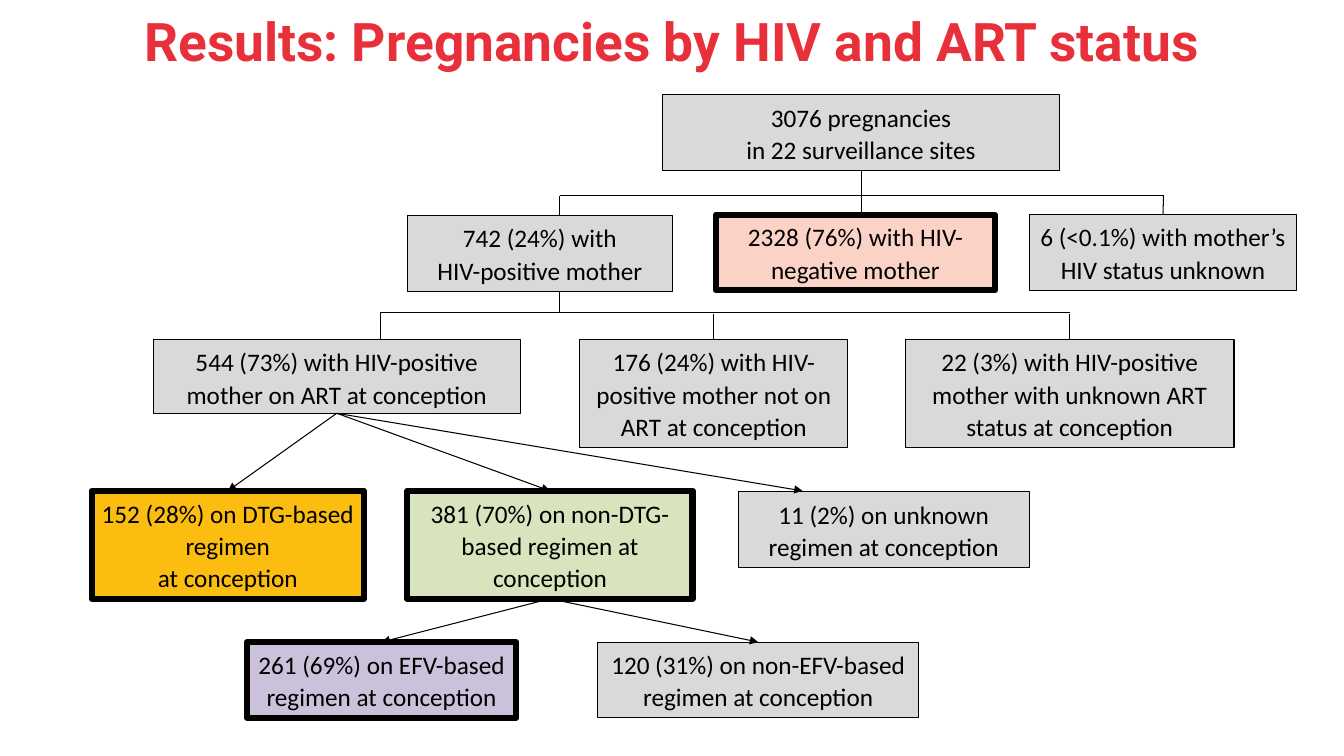
from dataclasses import dataclass

from lxml import etree
from pptx import Presentation
from pptx.dml.color import RGBColor
from pptx.enum.shapes import MSO_CONNECTOR, MSO_SHAPE
from pptx.enum.text import MSO_ANCHOR, MSO_AUTO_SIZE, PP_ALIGN
from pptx.oxml.ns import qn
from pptx.util import Emu, Pt

RECTANGLE = MSO_SHAPE.RECTANGLE
STRAIGHT = MSO_CONNECTOR.STRAIGHT
CENTER = PP_ALIGN.CENTER
TOP, BOTTOM = 0, 2  # connection sites of a rectangle
SCALE = 9144  # EMU per px, 100 px to the inch


@dataclass(frozen=True)
class Theme:
    title_font: str = "Roboto"
    body_font: str = "Calibri"
    title_size: int = 38
    body_size: int = 18
    title: str = "E8303B"
    ink: str = "000000"
    grey: str = "D9D9D9"
    peach: str = "FAD3C6"
    amber: str = "FBBD0F"
    green: str = "D7E4BD"
    purple: str = "CCC1DA"
    thin: float = 0.75
    thick: float = 4.5


THEME = Theme()
TITLE = "Results: Pregnancies by HIV and ART status"

# name: (text, left, top, width, height, fill); coloured boxes get a thick outline
BOXES = {
    "total": ("3076 pregnancies\nin 22 surveillance sites", 657, 94, 394, 75, THEME.grey),
    "positive": ("742 (24%) with\nHIV-positive mother", 404, 214, 263, 75, THEME.grey),
    "negative": ("2328 (76%) with HIV-negative mother", 710, 213, 277, 75, THEME.peach),
    "status unknown": ("6 (<0.1%) with mother’s HIV status unknown", 1021, 213, 265, 75, THEME.grey),
    "on ART": ("544 (73%) with HIV-positive mother on ART at conception", 152, 337, 364, 73, THEME.grey),
    "not on ART": ("176 (24%) with HIV-positive mother not on ART at conception", 575, 337, 266, 107, THEME.grey),
    "ART unknown": ("22 (3%) with HIV-positive mother with unknown ART status at conception",
                    898, 337, 326, 107, THEME.grey),
    "DTG": ("152 (28%) on DTG-based regimen\nat conception", 91, 487, 270, 107, THEME.amber),
    "non-DTG": ("381 (70%) on non-DTG-based regimen at conception", 404, 487, 283, 107, THEME.green),
    "regimen unknown": ("11 (2%) on unknown regimen at conception", 732, 488, 289, 75, THEME.grey),
    "EFV": ("261 (69%) on EFV-based regimen at conception", 245, 637, 267, 75, THEME.purple),
    "non-EFV": ("120 (31%) on non-EFV-based regimen at conception", 593, 637, 318, 75, THEME.grey),
}

# An end is either a point (x, y) or a box side (name, site)
LINES = [
    ((555, 194), (1154, 194)),
    (("total", BOTTOM), (854, 213)),
    ((555, 194), (555, 214)),
    ((1154, 194), ("status unknown", TOP)),
    ((555, 289), (555, 310)),
    ((377, 310), (1061, 310)),
    ((377, 310), (377, 337)),
    ((708, 312), ("not on ART", TOP)),
    ((1061, 312), ("ART unknown", TOP)),
]
ARROWS = [
    (("on ART", BOTTOM), ("DTG", TOP)),
    (("on ART", BOTTOM), ("non-DTG", TOP)),
    (("on ART", BOTTOM), (796, 487)),
    (("non-DTG", BOTTOM), ("EFV", TOP)),
    (("non-DTG", BOTTOM), ("non-EFV", TOP)),
]


def px(*lengths):
    return [Emu(length * SCALE) for length in lengths]


def color(value):
    return RGBColor.from_string(value)


def style_font(paragraph, name, size, value, bold=False):
    paragraph.alignment = CENTER
    for run in paragraph.runs:
        run.font.name = name
        run.font.size = Pt(size)
        run.font.bold = bold
        run.font.color.rgb = color(value)


def add_title(slide):
    title = slide.shapes.title
    title.left, title.top, title.width, title.height = px(0, 0, 1333, 80)
    frame = title.text_frame
    frame.text = TITLE
    frame.auto_size = MSO_AUTO_SIZE.NONE
    frame.vertical_anchor = MSO_ANCHOR.MIDDLE
    style_font(frame.paragraphs[0], THEME.title_font, THEME.title_size, THEME.title, True)


def add_box(slide, text, left, top, width, height, fill):
    shape = slide.shapes.add_shape(RECTANGLE, *px(left, top, width, height))
    shape.shadow.inherit = False
    shape.fill.solid()
    shape.fill.fore_color.rgb = color(fill)
    shape.line.color.rgb = color(THEME.ink)
    shape.line.width = Pt(THEME.thin if fill == THEME.grey else THEME.thick)
    frame = shape.text_frame
    frame.text = text
    frame.word_wrap = True
    frame.auto_size = MSO_AUTO_SIZE.SHAPE_TO_FIT_TEXT
    frame.vertical_anchor = MSO_ANCHOR.TOP
    for paragraph in frame.paragraphs:
        paragraph.line_spacing = 1.07
        style_font(paragraph, THEME.body_font, THEME.body_size, THEME.ink)
    return shape


def end_point(end):
    """Return the px position of a point or of the middle of a box side."""
    if end[0] not in BOXES:
        return end
    name, site = end
    _, left, top, width, height, _ = BOXES[name]
    return left + width // 2, top + (height if site == BOTTOM else 0)


def add_line(slide, boxes, start, end, arrow):
    connector = slide.shapes.add_connector(STRAIGHT, *px(*end_point(start), *end_point(end)))
    for place, connect in ((start, connector.begin_connect), (end, connector.end_connect)):
        if place[0] in boxes:
            connect(boxes[place[0]], place[1])
    connector.line.color.rgb = color(THEME.ink)
    connector.line.width = Pt(THEME.thin)
    if arrow:
        etree.SubElement(connector.line._get_or_add_ln(), qn("a:tailEnd"), type="triangle")
    etree.SubElement(connector._element.spPr, qn("a:effectLst"))


def main():
    presentation = Presentation()
    presentation.slide_width, presentation.slide_height = px(1333, 750)
    slide = presentation.slides.add_slide(presentation.slide_layouts[5])
    add_title(slide)
    boxes = {name: add_box(slide, *box) for name, box in BOXES.items()}
    for links, arrow in ((LINES, False), (ARROWS, True)):
        for start, end in links:
            add_line(slide, boxes, start, end, arrow)
    presentation.save("out.pptx")


if __name__ == "__main__":
    main()
